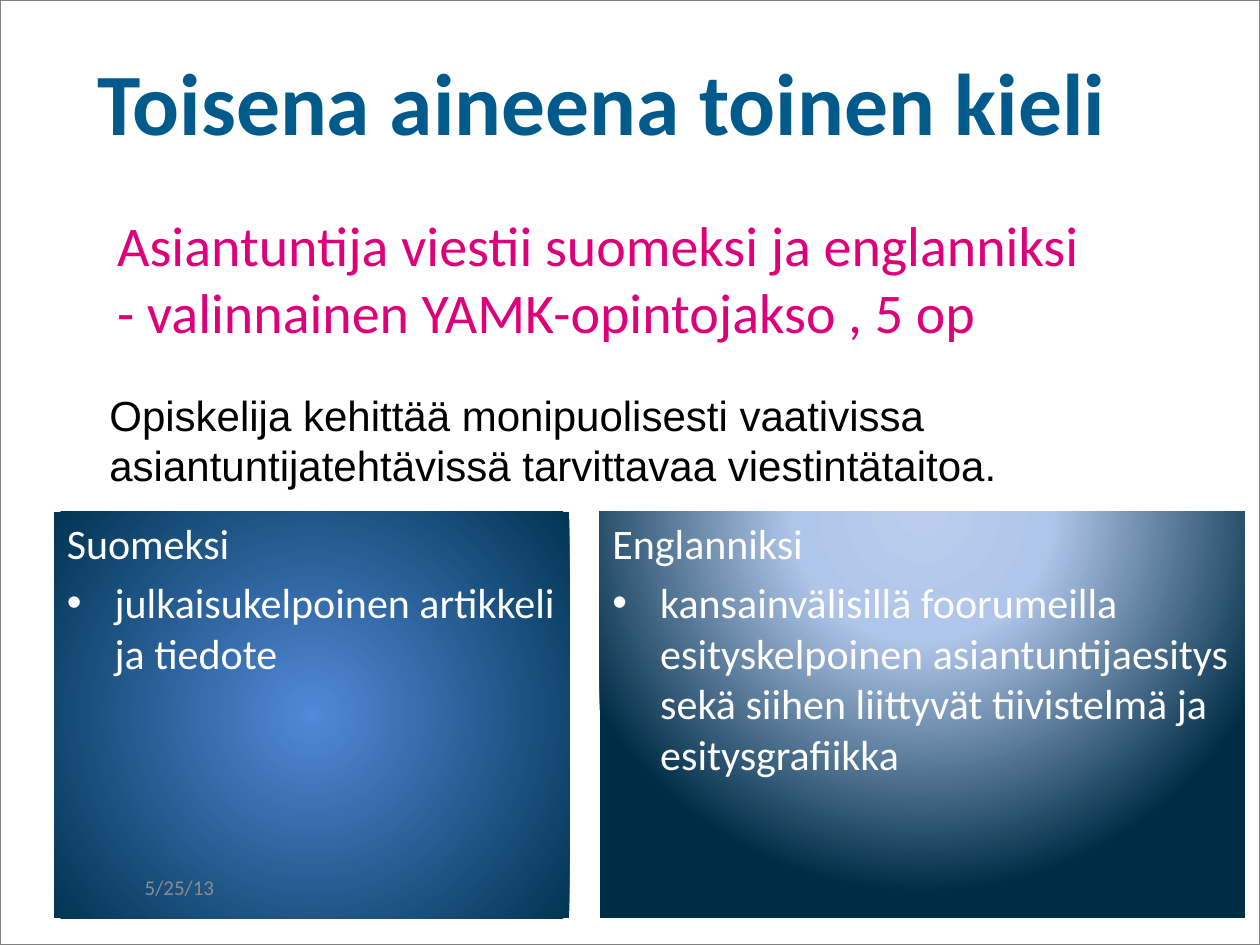
import lxml.etree
import pptx
import pptx.dml.color
import pptx.enum.shapes
import pptx.enum.text
import pptx.oxml.ns
import pptx.util

WIDTH, HEIGHT = 10, 7.5
COMPARISON_LAYOUT = 4
ANCHOR = pptx.enum.text.MSO_ANCHOR


def color(value):
    return pptx.dml.color.RGBColor.from_string(value)


def place(shape, box):
    shape.left, shape.top, shape.width, shape.height = map(pptx.util.Inches, box)


def add_element(parent, tag, **attributes):
    element = lxml.etree.SubElement(parent, pptx.oxml.ns.qn(tag))
    for name, value in attributes.items():
        element.set(name, str(value))
    return element


def write(shape, text, size, value, font="Calibri", bold=False, anchor=ANCHOR.TOP):
    """Fill a shape with left-aligned text in one style."""
    frame = shape.text_frame
    frame.text = text
    frame.word_wrap = True
    frame.auto_size = pptx.enum.text.MSO_AUTO_SIZE.NONE
    frame.vertical_anchor = anchor
    for paragraph in frame.paragraphs:
        paragraph.alignment = pptx.enum.text.PP_ALIGN.LEFT
        paragraph.space_before = pptx.util.Pt(0)
        for run in paragraph.runs:
            run.font.name = font
            run.font.size = pptx.util.Pt(size)
            run.font.bold = bold
            run.font.color.rgb = color(value)


def set_bullet(paragraph, character=None, indent=0.0):
    properties = paragraph._p.get_or_add_pPr()
    width = pptx.util.Inches(indent)
    properties.set("marL", str(width))
    properties.set("indent", str(-width))
    if character:
        add_element(properties, "a:buFont", typeface="Arial")
        add_element(properties, "a:buChar", char=character)
    else:
        add_element(properties, "a:buNone")


def fill_radial(shape, stops, center_y):
    """Circular gradient, centred across; center_y is a percentage from the top."""
    gradient = add_element(shape._element.spPr, "a:gradFill", rotWithShape=1)
    stop_list = add_element(gradient, "a:gsLst")
    for position, value in stops:
        stop = add_element(stop_list, "a:gs", pos=position * 1000)
        add_element(stop, "a:srgbClr", val=value)
    circle = add_element(gradient, "a:path", path="circle")
    add_element(circle, "a:fillToRect", l=50000, r=50000,
                t=center_y * 1000, b=(100 - center_y) * 1000)


def add_frame(slide):
    frame = slide.shapes.add_shape(
        pptx.enum.shapes.MSO_SHAPE.RECTANGLE, 0, 0,
        pptx.util.Inches(WIDTH), pptx.util.Inches(HEIGHT))
    frame.shadow.inherit = False
    frame.fill.background()
    frame.line.color.rgb = color("808080")
    frame.line.width = pptx.util.Pt(0.75)
    # Behind the placeholders
    slide.shapes._spTree.insert(2, frame._element)


def add_text(slide, box, text, size, value, **style):
    shape = slide.shapes.add_textbox(*map(pptx.util.Inches, box))
    write(shape, text, size, value, **style)


def fill_heading(placeholder, box, text, size, value, **style):
    place(placeholder, box)
    write(placeholder, text, size, value, **style)
    if placeholder.placeholder_format.idx:
        set_bullet(placeholder.text_frame.paragraphs[0])


def fill_panel(placeholder, box, language, item, stops, center_y):
    place(placeholder, box)
    fill_radial(placeholder, stops, center_y)
    write(placeholder, f"{language}\n{item}", 24, "FFFFFF")
    heading, bullet = placeholder.text_frame.paragraphs
    bullet.space_before = pptx.util.Pt(5)
    set_bullet(heading)
    set_bullet(bullet, "•", 0.38)


def main():
    presentation = pptx.Presentation()
    presentation.slide_width = pptx.util.Inches(WIDTH)
    presentation.slide_height = pptx.util.Inches(HEIGHT)
    slide = presentation.slides.add_slide(presentation.slide_layouts[COMPARISON_LAYOUT])
    title, subtitle, finnish, unused, english = slide.placeholders
    unused._element.getparent().remove(unused._element)
    add_frame(slide)

    # Title and course name
    fill_heading(title, (0.67, 0.29, 8.5, 1.02), "Toisena aineena toinen kieli",
                 50, "005A8C", bold=True, anchor=ANCHOR.MIDDLE)
    fill_heading(subtitle, (0.83, 1.62, 8.5, 0.94),
                 "Asiantuntija viestii suomeksi ja englanniksi\v"
                 "- valinnainen YAMK-opintojakso , 5 op", 32, "DE007B")

    # Language panels
    panel_top, panel_height = 4.06, 3.23
    fill_panel(finnish, (0.43, panel_top, 4.09, panel_height),
               "Suomeksi", "julkaisukelpoinen artikkeli ja tiedote",
               [(0, "5289D8"), (100, "003553")], 50)
    fill_panel(english, (4.76, panel_top, 5.12, panel_height),
               "Englanniksi",
               "kansainvälisillä foorumeilla esityskelpoinen asiantuntijaesitys "
               "sekä siihen liittyvät tiivistelmä ja esitysgrafiikka",
               [(0, "BACDEC"), (34, "AFC5E9"), (100, "002D46")], 0)

    # Date and introduction
    add_text(slide, (1.05, 6.82, 1.19, 0.44), "5/25/13", 12, "8C8C8C",
             anchor=ANCHOR.MIDDLE)
    add_text(slide, (0.77, 3.04, 7.87, 0.91),
             "Opiskelija kehittää monipuolisesti vaativissa "
             "asiantuntijatehtävissä tarvittavaa viestintätaitoa.",
             24, "000000", font="Arial")

    presentation.save("out.pptx")


if __name__ == "__main__":
    main()
